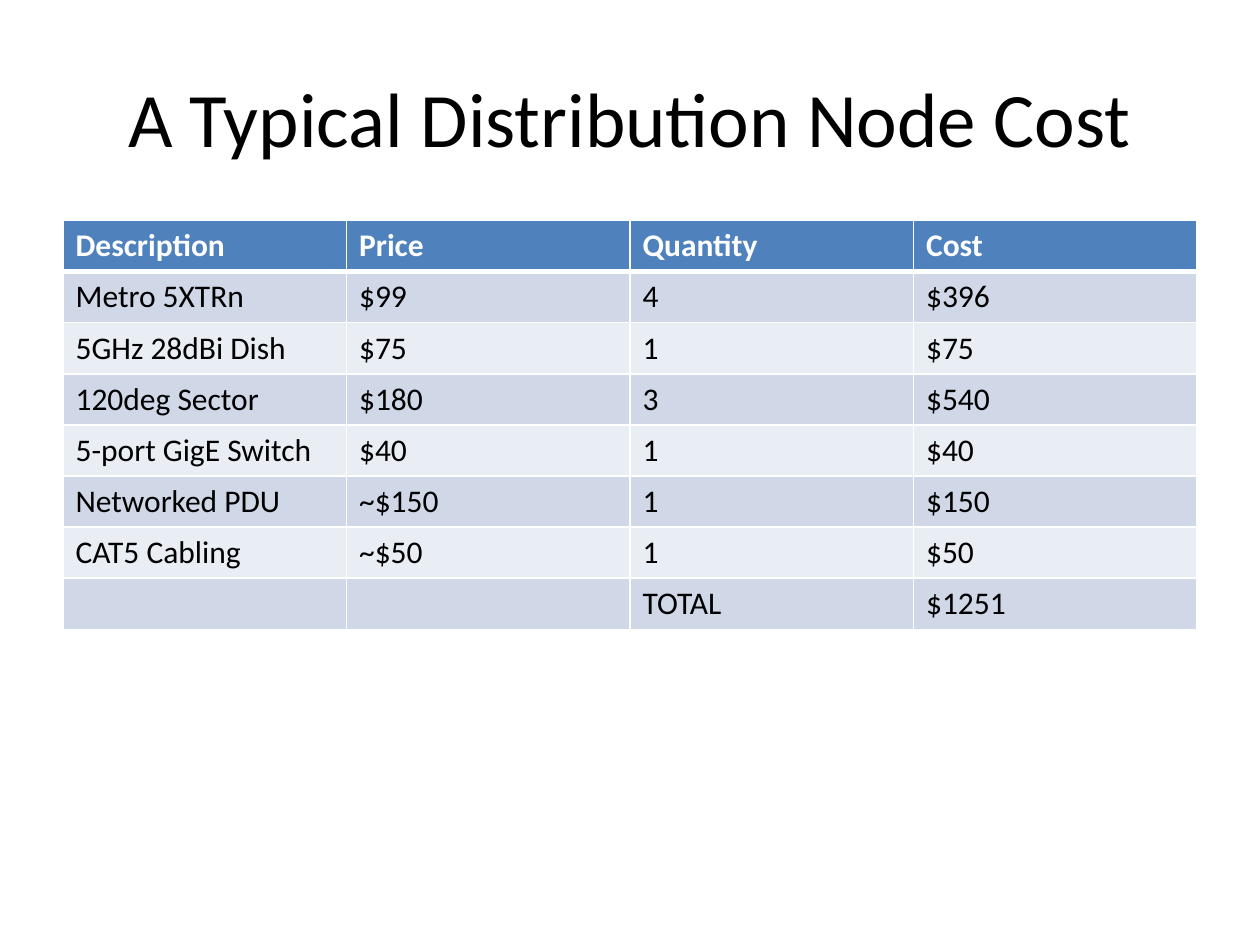
from lxml import etree
from pptx import Presentation
from pptx.dml.color import RGBColor
from pptx.enum.text import MSO_ANCHOR, PP_ALIGN
from pptx.oxml.ns import qn
from pptx.util import Pt

MIDDLE = MSO_ANCHOR.MIDDLE
CENTER = PP_ALIGN.CENTER
LEFT = PP_ALIGN.LEFT

COLORS = {
    "ink": "000000",
    "white": "FFFFFF",
    "head": "4F81BD",
    "odd": "D0D8E8",
    "even": "E9EDF4",
}

ROWS = [
    ("Description", "Price", "Quantity", "Cost"),
    ("Metro 5XTRn", "$99", "4", "$396"),
    ("5GHz 28dBi Dish", "$75", "1", "$75"),
    ("120deg Sector", "$180", "3", "$540"),
    ("5-port GigE Switch", "$40", "1", "$40"),
    ("Networked PDU", "~$150", "1", "$150"),
    ("CAT5 Cabling", "~$50", "1", "$50"),
    ("", "", "TOTAL", "$1251"),
]


class Deck:
    """Holds the style and the current slide, and draws each kind of element."""

    font = "Calibri"
    line = 1
    rule = 3

    def __init__(self, width, height):
        self.file = Presentation()
        self.file.slide_width = Pt(width)
        self.file.slide_height = Pt(height)
        self.slide = self.file.slides.add_slide(self.file.slide_layouts[6])

    def color(self, name):
        return RGBColor.from_string(COLORS[name])

    def label(self, frame, text, size, color, bold=False, align=LEFT):
        frame.text = text
        for para in frame.paragraphs:
            para.alignment = align
            para.font.size = Pt(size)
            for run in para.runs:
                run.font.name = self.font
                run.font.size = Pt(size)
                run.font.bold = bold
                run.font.color.rgb = self.color(color)

    def title(self, text, left, top, width, height):
        box = self.slide.shapes.add_textbox(Pt(left), Pt(top), Pt(width), Pt(height))
        frame = box.text_frame
        frame.word_wrap = True
        frame.vertical_anchor = MIDDLE
        self.label(frame, text, 44, "ink", align=CENTER)

    def border(self, cell, top, bottom):
        props = cell._tc.get_or_add_tcPr()
        widths = {"L": self.line, "R": self.line, "T": top, "B": bottom}
        for side, width in widths.items():
            edge = etree.SubElement(props, qn(f"a:ln{side}"), w=str(Pt(width)))
            fill = etree.SubElement(edge, qn("a:solidFill"))
            etree.SubElement(fill, qn("a:srgbClr"), val=COLORS["white"])

    def table(self, rows, left, top, width, height):
        shape = self.slide.shapes.add_table(
            len(rows), len(rows[0]), Pt(left), Pt(top), Pt(width), Pt(height)
        )
        grid = shape.table
        for r, row in enumerate(rows):
            head = r == 0
            fill = "head" if head else "odd" if r % 2 else "even"
            for c, text in enumerate(row):
                cell = grid.cell(r, c)
                self.border(
                    cell,
                    self.rule if r == 1 else self.line,
                    self.rule if head else self.line,
                )
                cell.fill.solid()
                cell.fill.fore_color.rgb = self.color(fill)
                ink = "white" if head else "ink"
                self.label(cell.text_frame, text, 18, ink, bold=head)


def main():
    deck = Deck(720, 540)
    deck.title("A Typical Distribution Node Cost", 36, 21.6, 648, 90)
    deck.table(ROWS, 36, 126, 648, 233.6)
    deck.file.save("out.pptx")


if __name__ == "__main__":
    main()
